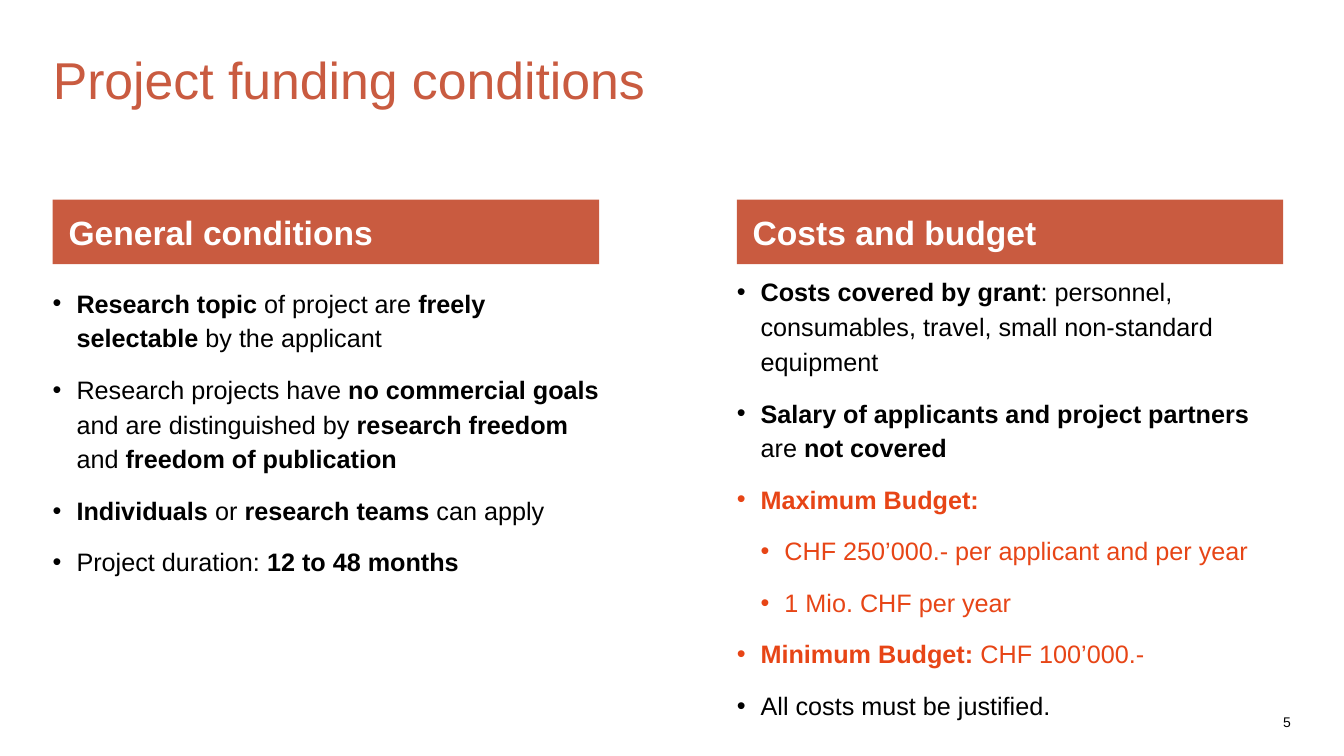
from lxml.etree import SubElement
from pptx import Presentation
from pptx.dml.color import RGBColor
from pptx.enum.shapes import MSO_SHAPE as Shape
from pptx.enum.text import MSO_ANCHOR as Anchor, PP_ALIGN as Align
from pptx.oxml.ns import qn
from pptx.util import Cm, Pt

# Content: ** switches bold on and off; items are (level, colour, text)
TITLE = "Project funding conditions"
PAGE = "5"
COLUMNS = [
    {"head": "General conditions", "left": 1.33, "top": 7.14, "height": 9.6, "items": [
        (0, "black", "**Research topic **of project are **freely selectable **by the applicant"),
        (0, "black", "Research projects have **no commercial goals **and are distinguished by "
                     "**research freedom **and **freedom of publication**"),
        (0, "black", "**Individuals **or **research teams **can apply"),
        (0, "black", "Project duration: **12 to 48 months**"),
    ]},
    {"head": "Costs and budget", "left": 18.57, "top": 6.86, "height": 10.87, "items": [
        (0, "black", "**Costs covered by grant**: personnel, consumables, travel, "
                     "small non-standard equipment"),
        (0, "black", "**Salary of applicants and project partners **are **not covered**"),
        (0, "orange", "**Maximum Budget:**"),
        (1, "orange", "CHF 250’000.- per applicant and per year"),
        (1, "orange", "1 Mio. CHF per year"),
        (0, "orange", "**Minimum Budget: **CHF 100’000.-"),
        (0, "black", "All costs must be justified."),
    ]},
]
COLORS = {"brick": "C95B40", "orange": "E74516", "black": "000000", "white": "FFFFFF"}

# Measures in cm
COLUMN_W, HEAD_TOP, HEAD_H = 13.77, 5.03, 1.63
INDENT = 0.6


def rgb(name):
    return RGBColor.from_string(COLORS[name])


def set_frame(tf, margins=(0, 0, 0, 0), anchor=Anchor.TOP):
    tf.word_wrap = True
    tf.vertical_anchor = anchor
    tf.margin_left, tf.margin_top, tf.margin_right, tf.margin_bottom = map(Cm, margins)


def write(p, text, size=18, color="black", level=None, spacing=None, after=0,
          align=Align.LEFT):
    """Fill a paragraph; a level makes it a bullet."""
    if level is not None:
        pPr = p._p.get_or_add_pPr()
        pPr.set("marL", str(Cm(INDENT * (level + 1))))
        pPr.set("indent", str(-Cm(INDENT)))
        SubElement(pPr, qn("a:buFont")).set("typeface", "Arial")
        SubElement(pPr, qn("a:buChar")).set("char", "•")
        p.level = level
    p.alignment = align
    p.space_before, p.space_after = Pt(0), Pt(after)
    if spacing:
        p.line_spacing = spacing
    for i, part in enumerate(text.split("**")):
        if part:
            r = p.add_run()
            r.text = part
            r.font.name, r.font.size = "Arial", Pt(size)
            r.font.bold = i % 2 == 1
            r.font.color.rgb = rgb(color)


def add_text_box(s, left, top, width, height):
    tf = s.shapes.add_textbox(Cm(left), Cm(top), Cm(width), Cm(height)).text_frame
    set_frame(tf)
    return tf


def add_column(s, head, left, top, height, items):
    # Heading bar
    bar = s.shapes.add_shape(Shape.RECTANGLE, Cm(left), Cm(HEAD_TOP), Cm(COLUMN_W), Cm(HEAD_H))
    bar.shadow.inherit = False
    bar.fill.solid()
    bar.fill.fore_color.rgb = rgb("brick")
    bar.line.fill.background()
    set_frame(bar.text_frame, (0.4, 0, 0.2, 0), Anchor.MIDDLE)
    write(bar.text_frame.paragraphs[0], f"**{head}**", size=24, color="white")

    # Bullets
    tf = add_text_box(s, left, top, COLUMN_W, height)
    for i, (level, color, text) in enumerate(items):
        p = tf.add_paragraph() if i else tf.paragraphs[0]
        write(p, text, color=color, level=level, spacing=1.15, after=12)


def main():
    prs = Presentation()
    prs.slide_width, prs.slide_height = Cm(33.87), Cm(19.05)
    s = prs.slides.add_slide(prs.slide_layouts[5])

    # Title
    sp = s.shapes.title
    sp.left, sp.top, sp.width, sp.height = Cm(1.33), Cm(1.33), Cm(31.2), Cm(2.9)
    set_frame(sp.text_frame, (0, 0.05, 0, 0))
    write(sp.text_frame.paragraphs[0], TITLE, size=37, color="brick", spacing=0.9)

    # Columns
    for column in COLUMNS:
        add_column(s, **column)

    # Page number
    tf = add_text_box(s, 22.93, 17.98, 9.6, 0.5)
    write(tf.paragraphs[0], PAGE, size=10, align=Align.RIGHT)

    prs.save("out.pptx")


if __name__ == "__main__":
    main()
